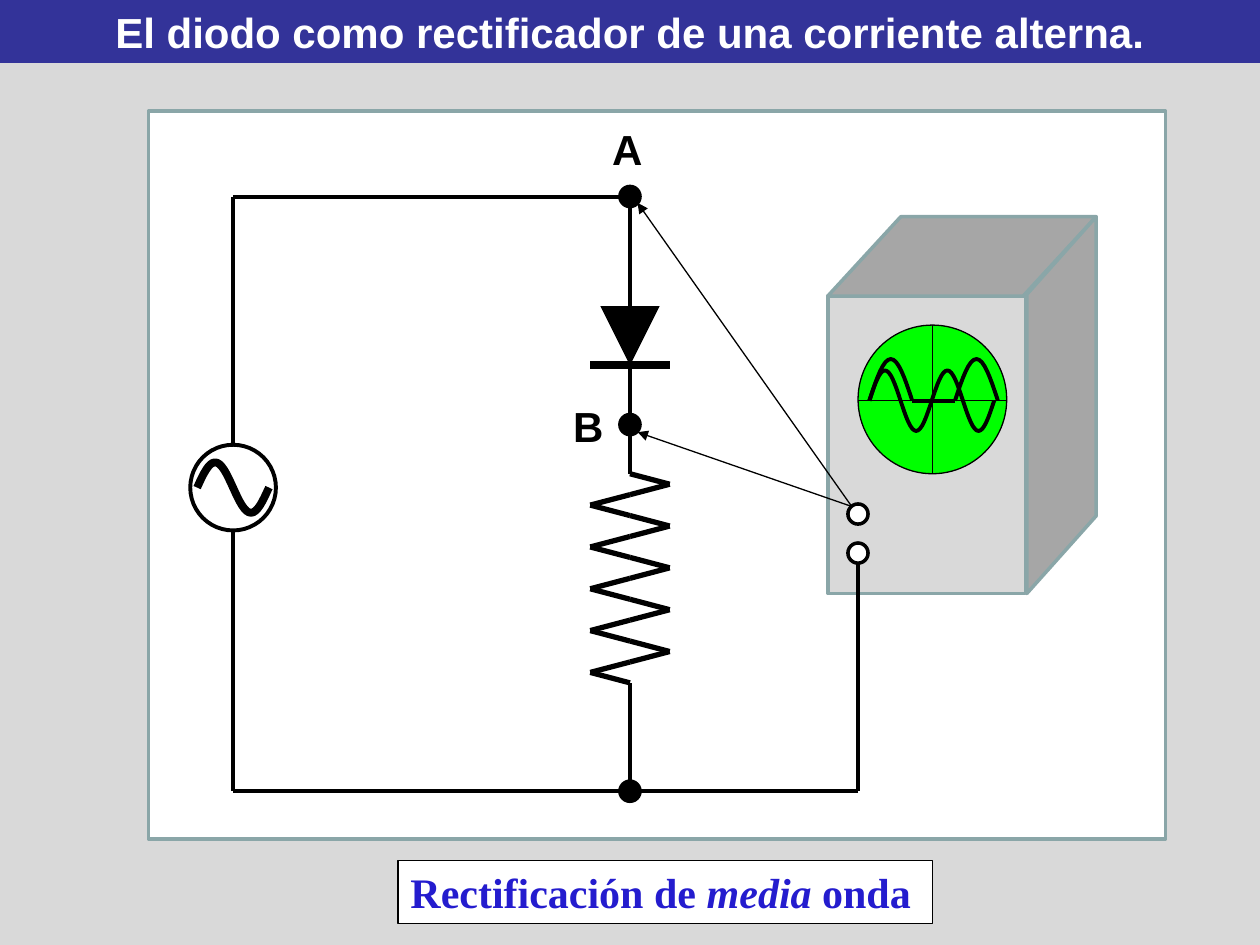
from dataclasses import dataclass
from itertools import pairwise
from math import pi, sin

from lxml.etree import SubElement
from pptx import Presentation
from pptx.dml.color import RGBColor
from pptx.enum.shapes import MSO_CONNECTOR, MSO_SHAPE
from pptx.enum.text import MSO_ANCHOR, MSO_AUTO_SIZE, PP_ALIGN
from pptx.oxml.ns import qn
from pptx.util import Inches, Pt


@dataclass(frozen=True)
class Theme:
    backdrop: str = "D9D9D9"
    banner: str = "333399"
    paper: str = "FFFFFF"
    ink: str = "000000"
    edge: str = "8AA6A8"
    shade: str = "A6A6A6"
    screen: str = "00FF00"
    caption: str = "241CCE"
    sans: str = "Arial"
    serif: str = "Times New Roman"
    size: int = 24
    hair: float = 0.5
    thin: float = 0.75
    outline: float = 2
    wire: float = 2.25
    zigzag: float = 3
    heavy: float = 4.5


T = Theme()
COLS, ROWS = 100, 75  # square grid cells over the slide
WIDTH, HEIGHT = Inches(10), Inches(7.5)

# Circuit grid: columns of the branches and rows of the rails
SOURCE_X, BRANCH_X, PROBE_X = 18.5, 50, 68.1
TOP_Y, BOTTOM_Y = 15.6, 62.8
DIODE_TOP, DIODE_BAR, NODE_B = 24.3, 29, 33.7
RES_TOP, RES_END = 37.6, 54.2
SOURCE_Y, SOURCE_R = 38.7, 3.4
SCREEN_X, SCREEN_Y, SCREEN_R = 74, 31.8, 5.9


def grid(n):
    return round(n * WIDTH / COLS)


def set_line(line, color, width):
    if color:
        line.color.rgb = RGBColor.from_string(color)
        line.width = Pt(width)
    else:
        line.fill.background()


def add_block(s, kind, x, y, w, h, fill, line=None, width=T.outline):
    sp = s.shapes.add_shape(kind, grid(x), grid(y), grid(w), grid(h))
    sp.shadow.inherit = False
    sp.fill.solid()
    sp.fill.fore_color.rgb = RGBColor.from_string(fill)
    set_line(sp.line, line, width)
    return sp


def add_disc(s, x, y, r, fill, width=T.outline):
    return add_block(s, MSO_SHAPE.OVAL, x - r, y - r, 2 * r, 2 * r, fill, T.ink, width)


def add_line(s, start, end, width=T.wire, arrow=False):
    ends = [grid(n) for n in (*start, *end)]
    cn = s.shapes.add_connector(MSO_CONNECTOR.STRAIGHT, *ends)
    set_line(cn.line, T.ink, width)
    if arrow:
        SubElement(cn.line._get_or_add_ln(), qn("a:tailEnd"), type="triangle")
    SubElement(cn.element.spPr, qn("a:effectLst"))


def add_wires(s, points, width=T.wire):
    for start, end in pairwise(points):
        add_line(s, start, end, width)


def add_wave(s, x, y, length, height, turns, width=T.wire):
    """Draw a sine curve of the given number of half turns; a negative height dips first."""
    steps = 16 * turns
    points = [(grid(x + length * i / steps),
               grid(y - height * sin(pi * turns * i / steps))) for i in range(steps + 1)]
    fb = s.shapes.build_freeform(*points[0])
    fb.add_line_segments(points[1:], close=False)
    sp = fb.convert_to_shape()
    sp.shadow.inherit = False
    sp.fill.background()
    set_line(sp.line, T.ink, width)


def add_text(sp, *runs, font=T.sans, color=T.ink, align=PP_ALIGN.LEFT):
    """Write bold runs, each one a pair of text and italic flag."""
    tf = sp.text_frame
    tf.word_wrap = True
    tf.auto_size = MSO_AUTO_SIZE.SHAPE_TO_FIT_TEXT
    tf.vertical_anchor = MSO_ANCHOR.TOP
    p = tf.paragraphs[0]
    p.alignment = align
    for text, italic in runs:
        r = p.add_run()
        r.text = text
        r.font.name, r.font.size = font, Pt(T.size)
        r.font.bold, r.font.italic = True, italic
        r.font.color.rgb = RGBColor.from_string(color)


def add_label(s, text, x, y):
    add_text(s.shapes.add_textbox(grid(x), grid(y), grid(4.7), grid(5)), (text, False))


def add_scope(s):
    # Case: front, top and side
    add_block(s, MSO_SHAPE.RECTANGLE, 65.7, 23.5, 15.7, 23.6, T.backdrop, T.edge)
    top = add_block(s, MSO_SHAPE.PARALLELOGRAM, 65.7, 17.2, 21.3, 6.3, T.shade, T.edge)
    top.adjustments[0] = 0.92
    side = add_block(s, MSO_SHAPE.PARALLELOGRAM, 69.3, 29.4, 29.9, 5.5, T.shade, T.edge)
    side.adjustments[0] = 1.12
    side.rotation = 270
    side.element.spPr.find(qn("a:xfrm")).set("flipV", "1")
    # Screen with the input wave, and the two terminals
    add_disc(s, SCREEN_X, 31.7, SCREEN_R, T.screen, T.thin)
    add_wave(s, 69, SCREEN_Y, 9.9, 2.4, 4)
    for y in (40.8, 43.9):
        add_disc(s, PROBE_X, y, 0.8, T.paper)


def add_circuit(s):
    # Return wire from the scope
    add_wires(s, [(PROBE_X, 44.7), (PROBE_X, BOTTOM_Y), (BRANCH_X, BOTTOM_Y)])
    # Resistor
    swing, steps = (0, 3.15, 0, -3.15), 20
    pitch = (RES_END - RES_TOP) / steps
    add_wires(s, [(BRANCH_X + swing[i % 4], RES_TOP + i * pitch)
                  for i in range(steps + 1)], T.zigzag)
    # Diode
    diode = add_block(s, MSO_SHAPE.ISOSCELES_TRIANGLE, BRANCH_X - 2.35, DIODE_TOP,
                      4.7, 4.7, T.ink)
    diode.rotation = 180
    add_line(s, (BRANCH_X + 3.15, DIODE_BAR), (BRANCH_X - 3.15, DIODE_BAR), T.heavy)
    # Alternating source
    add_disc(s, SOURCE_X, SOURCE_Y, SOURCE_R, T.paper, T.wire)
    add_wave(s, SOURCE_X - 2.85, SOURCE_Y, 5.7, 2, 2, T.heavy)
    # Wires
    add_wires(s, [(SOURCE_X, SOURCE_Y - SOURCE_R), (SOURCE_X, TOP_Y),
                  (BRANCH_X, TOP_Y), (BRANCH_X, DIODE_TOP)])
    add_line(s, (BRANCH_X, DIODE_BAR), (BRANCH_X, RES_TOP))
    add_wires(s, [(SOURCE_X, SOURCE_Y + SOURCE_R), (SOURCE_X, BOTTOM_Y),
                  (BRANCH_X, BOTTOM_Y), (BRANCH_X, RES_END)])
    # Nodes and their letters
    for y in (TOP_Y, NODE_B, BOTTOM_Y):
        add_disc(s, BRANCH_X, y, 0.8, T.ink)
    add_label(s, "A", 47.6, 9.3)
    add_label(s, "B", 44.5, 31.3)


def add_measurement(s):
    # Probes from the terminal to both nodes
    for y in (16.1, 34.3):
        add_line(s, (67.6, 40.2), (50.6, y), T.thin, arrow=True)
    # Half-wave trace
    for x in (69, 75.8):
        add_wave(s, x, SCREEN_Y, 3.4, 3.3, 1)
    add_line(s, (72.4, SCREEN_Y), (75.8, SCREEN_Y))
    # Screen axes
    add_line(s, (SCREEN_X, 25.8), (SCREEN_X, 37.6), T.hair)
    add_line(s, (SCREEN_X - SCREEN_R, SCREEN_Y), (SCREEN_X + SCREEN_R, SCREEN_Y), T.hair)


def main():
    prs = Presentation()
    prs.slide_width, prs.slide_height = WIDTH, HEIGHT
    s = prs.slides.add_slide(prs.slide_layouts[6])
    s.background.fill.solid()
    s.background.fill.fore_color.rgb = RGBColor.from_string(T.backdrop)

    # Drawing
    add_block(s, MSO_SHAPE.RECTANGLE, 11.8, 8.8, 80.7, 57.8, T.paper, T.edge)
    add_scope(s)
    add_circuit(s)
    add_measurement(s)

    # Caption and title
    caption = add_block(s, MSO_SHAPE.RECTANGLE, 31.6, 68.3, 42.4, 5, T.paper, T.ink, T.thin)
    add_text(caption, ("Rectificación de ", False), ("media", True), (" onda", False),
             font=T.serif, color=T.caption)
    title = add_block(s, MSO_SHAPE.RECTANGLE, 0, 0, COLS, 5, T.banner)
    add_text(title, ("El diodo como rectificador de una corriente alterna.", False),
             color=T.paper, align=PP_ALIGN.CENTER)
    prs.save("out.pptx")


if __name__ == "__main__":
    main()
